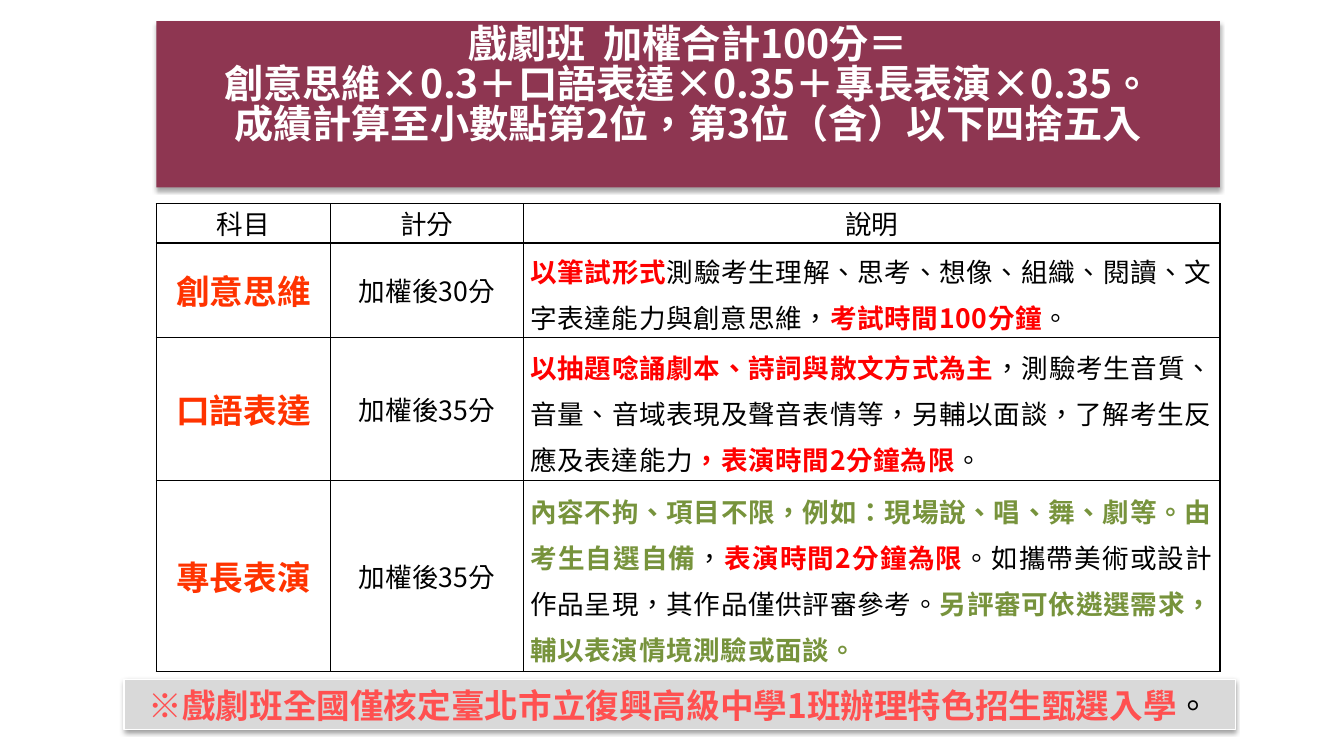
from lxml.etree import SubElement
from pptx import Presentation
from pptx.dml.color import RGBColor
from pptx.enum.shapes import MSO_SHAPE
from pptx.enum.text import MSO_ANCHOR, PP_ALIGN
from pptx.oxml import parse_xml
from pptx.oxml.ns import nsdecls, qn
from pptx.util import Pt

PX = 9144
FONT = "Noto Sans CJK SC"
COLORS = {
    "wine": "8E3651", "gray": "D9D9D9", "white": "FFFFFF", "black": "000000",
    "orange": "FF3300", "red": "FF0000", "green": "77933C", "coral": "FF5050",
}


def add_run(p, text, color, size, bold=False, spacing=0, name=FONT):
    r = p.add_run()
    r.text = text
    for key, value in {"size": Pt(size), "bold": bold, "name": name}.items():
        setattr(r.font, key, value)
    r.font.color.rgb = RGBColor.from_string(COLORS[color])
    rPr = r.font._element
    rPr.set("lang", "zh-TW")
    rPr.set("spc", str(spacing))
    SubElement(rPr, qn("a:ea")).set("typeface", name)


def add_banner(box, fill, line, anchor, blur, dist, alpha):
    sp = s.shapes.add_shape(MSO_SHAPE.RECTANGLE, *[v * PX for v in box])
    sp.fill.solid()
    sp.fill.fore_color.rgb = RGBColor.from_string(COLORS[fill])
    if line:
        sp.line.color.rgb = RGBColor.from_string(COLORS[line])
        sp.line.width = Pt(0.75)
    else:
        sp.line.fill.background()
    sp._element.spPr.append(parse_xml(
        f'<a:effectLst {nsdecls("a")}><a:outerShdw blurRad="{Pt(blur)}" '
        f'dist="{Pt(dist)}" dir="5400000" rotWithShape="0">'
        f'<a:srgbClr val="{COLORS["black"]}"><a:alpha val="{alpha}000"/>'
        '</a:srgbClr></a:outerShdw></a:effectLst>'))
    tf = sp.text_frame
    tf.word_wrap = True
    tf.vertical_anchor = anchor
    return tf


prs = Presentation()
prs.slide_width, prs.slide_height = 1333 * PX, 750 * PX
s = prs.slides.add_slide(prs.slide_layouts[6])

headers = ["科目", "計分", "說明"]
subjects = [
    ("創意思維", "加權後30分", [
        ("以筆試形式", "red"),
        ("測驗考生理解、思考、想像、組織、閱讀、文字表達能力與創意思維，", "black"),
        ("考試時間100分鐘", "red"),
        ("。", "black"),
    ]),
    ("口語表達", "加權後35分", [
        ("以抽題唸誦劇本、詩詞與散文方式為主", "red"),
        ("，測驗考生音質、音量、音域表現及聲音表情等，另輔以面談，了解考生反應及表達能力", "black"),
        ("，表演時間2分鐘為限", "red"),
        ("。", "black"),
    ]),
    ("專長表演", "加權後35分", [
        ("內容不拘、項目不限，例如：現場說、唱、舞、劇等。由考生自選自備", "green"),
        ("，", "black"),
        ("表演時間2分鐘為限", "red"),
        ("。如攜帶美術或設計作品呈現，其作品僅供評審參考。", "black"),
        ("另評審可依遴選需求，輔以表演情境測驗或面談。", "green"),
    ]),
]
widths = [173, 191, 691]
heights = [39, 94, 142, 189]

frame = s.shapes.add_table(4, 3, 155 * PX, 202 * PX, sum(widths) * PX, sum(heights) * PX)
table = frame.table
table.first_row = table.horz_banding = False
for column, width in zip(table.columns, widths):
    column.width = width * PX
for row, height in zip(table.rows, heights):
    row.height = height * PX

for cell in table.iter_cells():
    for key, value in {"margin_left": 7 * PX, "margin_right": 7 * PX, "margin_top": 0,
                       "margin_bottom": 0, "vertical_anchor": MSO_ANCHOR.MIDDLE}.items():
        setattr(cell, key, value)
    tcPr = cell._tc.get_or_add_tcPr()
    for side in ("lnL", "lnR", "lnT", "lnB"):
        tcPr.append(parse_xml(
            f'<a:{side} {nsdecls("a")} w="{Pt(1)}"><a:solidFill>'
            f'<a:srgbClr val="{COLORS["black"]}"/></a:solidFill></a:{side}>'))
    cell.fill.background()
    cell.text_frame.paragraphs[0].alignment = PP_ALIGN.CENTER

for col, header in enumerate(headers):
    cell = table.cell(0, col)
    cell.vertical_anchor = MSO_ANCHOR.TOP
    add_run(cell.text_frame.paragraphs[0], header, "black", 19)

for row, (subject, score, details) in enumerate(subjects, 1):
    name_p, score_p, detail_p = [table.cell(row, col).text_frame.paragraphs[0] for col in range(3)]
    add_run(name_p, subject, "orange", 24, True)
    add_run(score_p, score, "black", 19, spacing=10)
    detail_p.alignment = PP_ALIGN.JUSTIFY
    detail_p.line_spacing = 1.2
    for text, color in details:
        add_run(detail_p, text, color, 19, color != "black" , 50)

tf = add_banner((155, 21, 1055, 165), "wine", None, MSO_ANCHOR.TOP, 3.1, 1.8, 35)
title_lines = [
    "戲劇班  加權合計100分＝",
    "創意思維×0.3＋口語表達×0.35＋專長表演×0.35。",
    "成績計算至小數點第2位，第3位（含）以下四捨五入",
]
for i, text in enumerate(title_lines):
    p = tf.add_paragraph() if i else tf.paragraphs[0]
    p.alignment = PP_ALIGN.CENTER
    p.line_spacing = 0.85
    add_run(p, text, "white", 28, True)

tf = add_banner((123, 674, 1102, 50), "gray", "white", MSO_ANCHOR.MIDDLE, 3.1, 1.6, 38)
p = tf.paragraphs[0]
p.alignment = PP_ALIGN.CENTER
add_run(p, "※戲劇班全國僅核定臺北市立復興高級中學1班辦理特色招生甄選入學", "coral", 24, True)
add_run(p, "。", "black", 24, name="Calibri")

prs.save("out.pptx")
